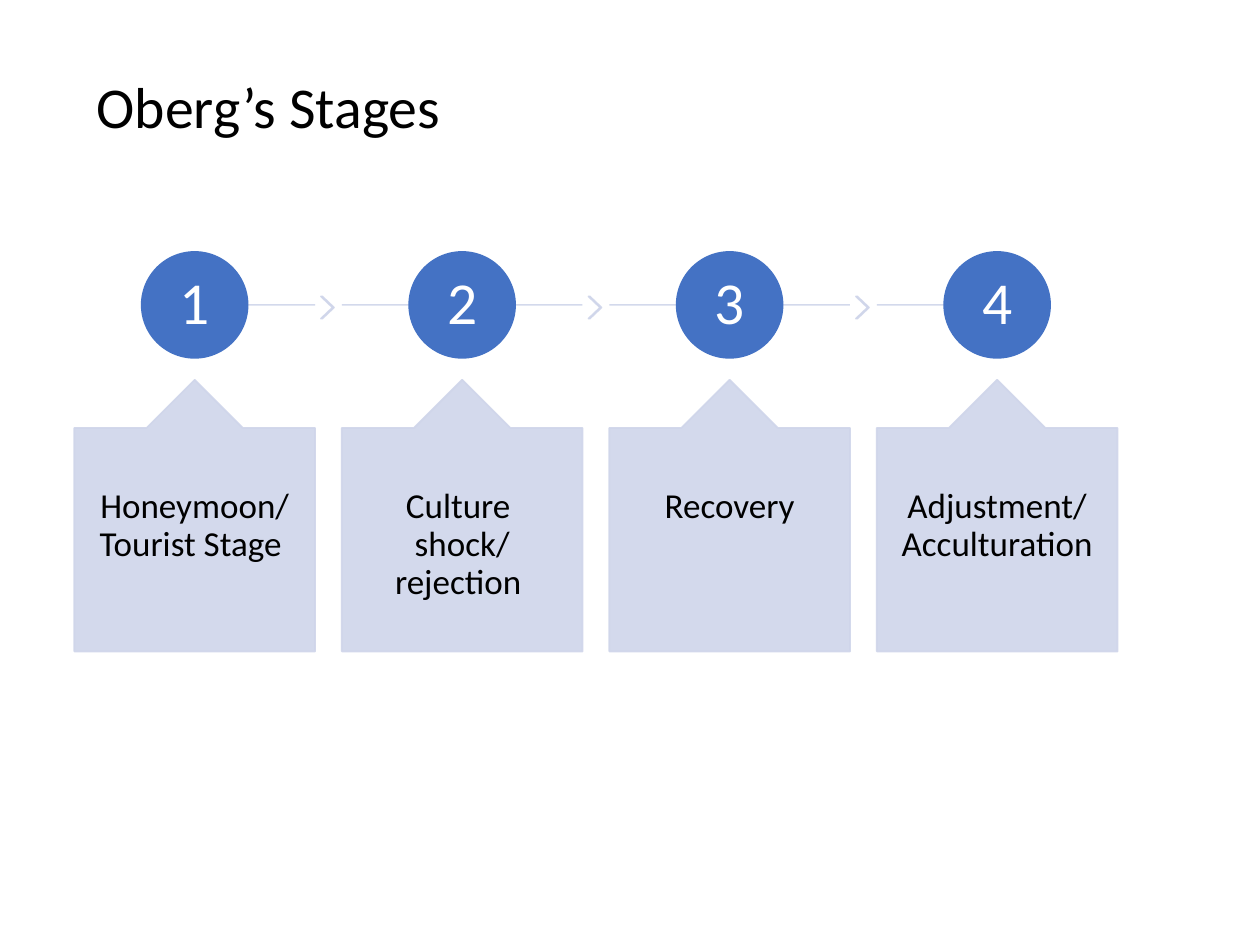
from lxml import etree
from pptx import Presentation
from pptx import util as u
from pptx.dml.color import RGBColor
from pptx.enum import shapes, text
from pptx.oxml.ns import qn

COLORS = {"disc": "4472C4", "pale": "CFD5EA", "ink": "000000", "number": "FFFFFF"}
FONT = "Calibri"
WIDTH, HEIGHT = u.Inches(10), u.Inches(7.5)
STAGES = [
    ["Honeymoon/", "Tourist Stage "],
    ["Culture ", "shock/", "rejection "],
    ["Recovery"],
    ["Adjustment/", "Acculturation"],
]
FIRST_COLUMN, PITCH, COLUMN = u.Inches(0.59), u.Inches(2.123), u.Inches(1.91)
ROW_TOP, ROW_HEIGHT = u.Inches(2), u.Inches(3.17)
DISC = u.Inches(0.84)


def color(name):
    """Return the named palette colour."""
    return RGBColor.from_string(COLORS[name])


def soften(shape):
    """Make the solid colours of a shape's fill and line 90% opaque."""
    for node in shape.element.spPr.iter(qn("a:srgbClr")):
        etree.SubElement(node, qn("a:alpha")).set("val", "90000")


def write(shape, lines, size, ink, insets, anchor, align):
    """Write lines as runs of one paragraph in a shape."""
    frame = shape.text_frame
    frame.word_wrap = True
    frame.vertical_anchor = anchor
    frame.margin_left, frame.margin_top, frame.margin_right, frame.margin_bottom = map(u.Inches, insets)
    paragraph = frame.paragraphs[0]
    paragraph.alignment, paragraph.line_spacing = align, 0.9
    for index, line in enumerate(lines):
        if index:
            paragraph.add_line_break()
        run = paragraph.add_run()
        run.text = line
        run.font.size, run.font.name = u.Pt(size), FONT
        run.font.color.rgb = color(ink)


def add_figure(slide, kind, box, paint):
    """Add a preset shape with matching fill and line."""
    shape = slide.shapes.add_shape(kind, *map(int, box))
    shape.shadow.inherit = False
    shape.fill.solid()
    shape.fill.fore_color.rgb = color(paint)
    shape.line.color.rgb = color(paint)
    shape.line.width = u.Pt(1)
    return shape


def add_track(slide, start, end, middle):
    """Add a horizontal piece of the line between stages."""
    track = slide.shapes.add_connector(
        shapes.MSO_CONNECTOR.STRAIGHT, int(start), int(middle), int(end), int(middle))
    track.line.color.rgb = color("pale")
    track.line.width = u.Pt(1)
    soften(track)
    etree.SubElement(track.element.spPr, qn("a:effectLst"))


def add_title(slide, box, title):
    """Add the slide title in the given box."""
    shape = slide.shapes.add_textbox(*map(int, box))
    write(shape, [title], 33, "ink", (0.1, 0.05, 0.1, 0.05),
          text.MSO_ANCHOR.MIDDLE, text.PP_ALIGN.LEFT)


def add_stage(slide, box, number, lines, last):
    """Add one stage: track, chevron, numbered disc and callout."""
    left, top, width, height = box
    center, middle = left + width / 2, top + DISC / 2
    add_track(slide, center if number == 1 else left, center if last else left + width, middle)
    if not last:
        chevron = add_figure(slide, shapes.MSO_SHAPE.CHEVRON,
                             (left + width * 1.025, top + DISC * 0.42, width * 0.054, DISC * 0.21), "pale")
        chevron.adjustments[0] = 0.9
        soften(chevron)
    disc = add_figure(slide, shapes.MSO_SHAPE.OVAL, (center - DISC / 2, top, DISC, DISC), "disc")
    write(disc, [str(number)], 34, "number", (0.03,) * 4,
          text.MSO_ANCHOR.MIDDLE, text.PP_ALIGN.CENTER)
    callout = add_figure(slide, shapes.MSO_SHAPE.UP_ARROW_CALLOUT,
                         (left, top + height * 0.32, width, height * 0.68), "pale")
    for index, value in enumerate((0.5, 0.2, 0.2, 1)):
        callout.adjustments[index] = value
    soften(callout)
    write(callout, lines, 20, "ink", (0.15, 0.48, 0.15, 0.18),
          text.MSO_ANCHOR.TOP, text.PP_ALIGN.CENTER)


def main():
    """Build and save the slide."""
    presentation = Presentation()
    presentation.slide_width, presentation.slide_height = WIDTH, HEIGHT
    slide = presentation.slides.add_slide(presentation.slide_layouts[6])
    add_title(slide, (u.Inches(0.67), HEIGHT / 30, WIDTH * 0.85, HEIGHT / 6), "Oberg’s Stages")
    for index, lines in enumerate(STAGES):
        box = (FIRST_COLUMN + index * PITCH, ROW_TOP, COLUMN, ROW_HEIGHT)
        add_stage(slide, box, index + 1, lines, index == len(STAGES) - 1)
    presentation.save("out.pptx")


if __name__ == "__main__":
    main()
